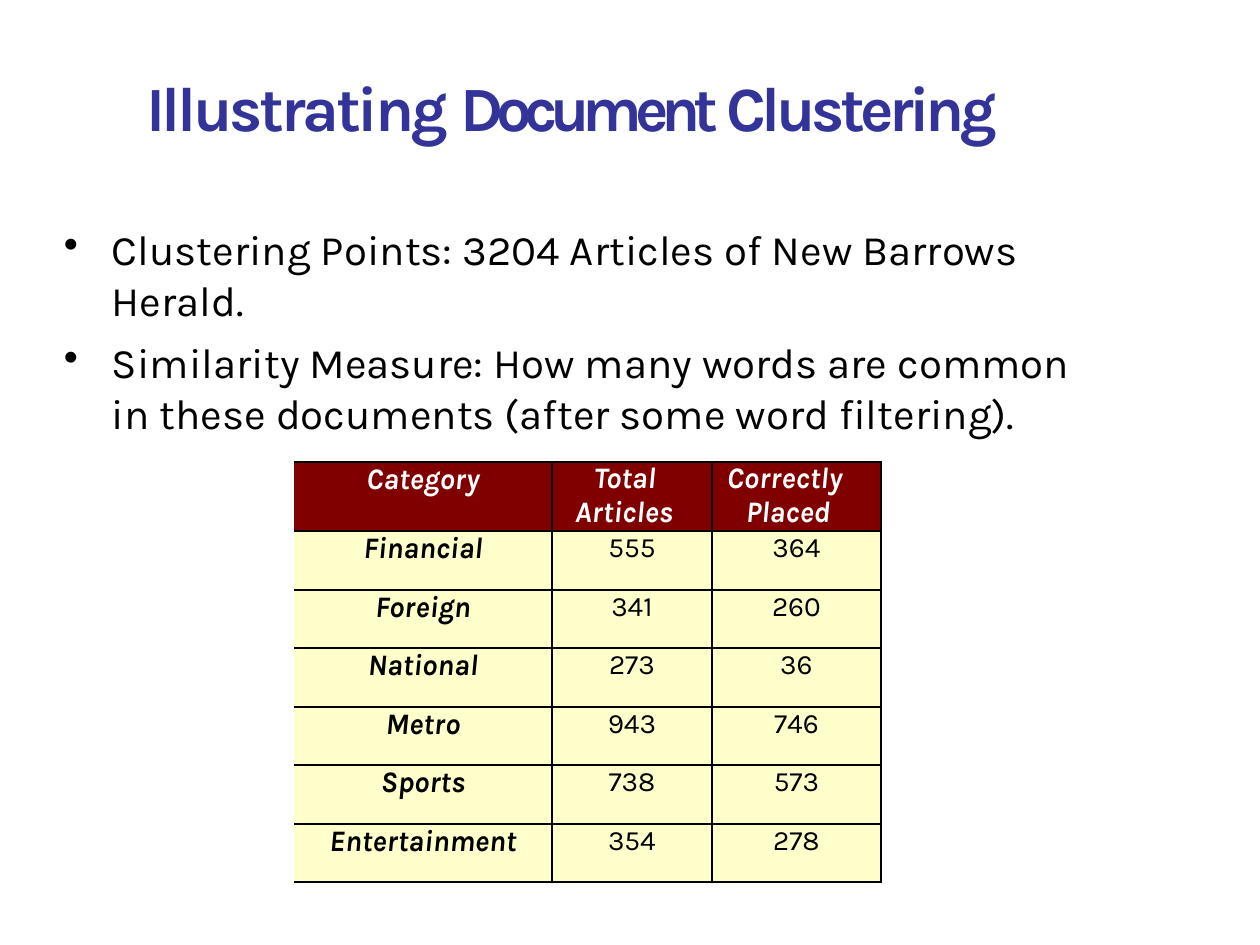
from dataclasses import dataclass

from lxml import etree
from pptx import Presentation
from pptx import util as u
from pptx.dml.color import RGBColor
from pptx.enum import text
from pptx.oxml import ns

EMU_PER_PX = 914400 / 126


@dataclass(frozen=True)
class Theme:
    font: str = "Karla"
    title: str = "333399"
    ink: str = "000000"
    header_ink: str = "FFFFFF"
    header_fill: str = "800000"
    body_fill: str = "FFFFCC"
    title_size: int = 36
    bullet_size: int = 24
    label_size: int = 17
    number_size: int = 16


@dataclass(frozen=True)
class Box:
    left: int
    top: int
    width: int
    height: int


@dataclass(frozen=True)
class Row:
    category: str
    total: int
    correct: int


@dataclass(frozen=True)
class Heading:
    label: str
    margin: int = 0
    indent: int = 0


THEME = Theme()
TITLE_BOX = Box(96, 48, 951, 96)
BULLET_BOX = Box(63, 210, 1018, 229)
TABLE_BOX = Box(294, 462, 587, 420)
COLUMN_WIDTHS = (258, 160, 169)
HEADER_HEIGHT = 69
TITLE_RUNS = (("Illustrating ", -190), ("Document ", -420), ("Clustering", -260))
BULLETS = (
    ("Clustering Points: 3204 Articles of New Barrows Herald.", 8),
    ("Similarity Measure: How many words are common in these documents "
     "(after some word filtering).", 7),
)
HEADINGS = (
    Heading("Category"),
    Heading("Total Articles", 23, 19),
    Heading("Correctly Placed", 34, -19),
)
ROWS = (
    Row("Financial", 555, 364),
    Row("Foreign", 341, 260),
    Row("National", 273, 36),
    Row("Metro", 943, 746),
    Row("Sports", 738, 573),
    Row("Entertainment", 354, 278),
)


def px(length: int) -> int:
    return round(length * EMU_PER_PX)


def style_font(font, size: int, color: str, bold=False, italic=False) -> None:
    font.name = THEME.font
    font.size = u.Pt(size)
    font.bold = bold
    font.italic = italic
    font.color.rgb = RGBColor.from_string(color)


def set_indent(para, margin: int, indent: int) -> None:
    properties = para._p.get_or_add_pPr()
    properties.set("marL", str(px(margin)))
    properties.set("indent", str(px(indent)))


def add_frame(page, box: Box, top_inset: int):
    shape = page.shapes.add_textbox(
        px(box.left), px(box.top), px(box.width), px(box.height))
    frame = shape.text_frame
    frame.word_wrap = True
    frame.margin_left = frame.margin_right = frame.margin_bottom = 0
    frame.margin_top = px(top_inset)
    return frame


def add_title(page) -> None:
    frame = add_frame(page, TITLE_BOX, 1)
    frame.vertical_anchor = text.MSO_ANCHOR.BOTTOM
    para = frame.paragraphs[0]
    para.alignment = text.PP_ALIGN.CENTER
    for words, spacing in TITLE_RUNS:
        span = para.add_run()
        span.text = words
        style_font(span.font, THEME.title_size, THEME.title, bold=True)
        span.font._element.set("spc", str(spacing))


def add_bullets(page) -> None:
    frame = add_frame(page, BULLET_BOX, 14)
    frame.text = "\n".join(words for words, _ in BULLETS)
    for index, (para, (_, space)) in enumerate(zip(frame.paragraphs, BULLETS)):
        set_indent(para, 49, -48)
        properties = para._p.get_or_add_pPr()
        color = etree.SubElement(properties, ns.qn("a:buClr"))
        etree.SubElement(color, ns.qn("a:srgbClr"), val=THEME.ink)
        etree.SubElement(properties, ns.qn("a:buChar"), char="•")
        if index:
            para.space_before = u.Pt(space)
        style_font(para.runs[0].font, THEME.bullet_size, THEME.ink)


def set_borders(cell, has_left: bool) -> None:
    """Rule every side of the cell, leaving the table's left edge open."""
    properties = cell._tc.get_or_add_tcPr()
    sides = (("L", 1.5 if has_left else 0), ("R", 1.5), ("T", 1), ("B", 1))
    for place, (side, points) in enumerate(sides):
        line = etree.Element(ns.qn(f"a:ln{side}"), w=str(u.Pt(points)))
        if points:
            fill = etree.SubElement(line, ns.qn("a:solidFill"))
            etree.SubElement(fill, ns.qn("a:srgbClr"), val=THEME.ink)
        else:
            etree.SubElement(line, ns.qn("a:noFill"))
        properties.insert(place, line)


def fill_cell(cell, words: str, fill: str, column: int):
    """Set the cell's text, fill and rules, and return its paragraph."""
    cell.margin_left = cell.margin_right = cell.margin_bottom = 0
    cell.margin_top = px(1) if column else 0
    cell.fill.solid()
    cell.fill.fore_color.rgb = RGBColor.from_string(fill)
    set_borders(cell, has_left=column > 0)
    cell.text_frame.text = words
    para = cell.text_frame.paragraphs[0]
    para.alignment = text.PP_ALIGN.CENTER
    return para


def fill_header(table) -> None:
    for column, heading in enumerate(HEADINGS):
        para = fill_cell(table.cell(0, column), heading.label,
                         THEME.header_fill, column)
        para.line_spacing = u.Pt(19.2 if column else 19.9)
        if column:
            para.alignment = text.PP_ALIGN.LEFT
            set_indent(para, heading.margin, heading.indent)
        style_font(para.runs[0].font, THEME.label_size, THEME.header_ink, True, True)


def fill_row(table, index: int, row: Row) -> None:
    for column, value in enumerate((row.category, row.total, row.correct)):
        para = fill_cell(table.cell(index, column), str(value),
                         THEME.body_fill, column)
        is_label = column == 0
        if is_label:
            para.line_spacing = u.Pt(20)
        size = THEME.label_size if is_label else THEME.number_size
        style_font(para.runs[0].font, size, THEME.ink, is_label, is_label)


def add_results(page) -> None:
    table = page.shapes.add_table(
        len(ROWS) + 1, len(HEADINGS), px(TABLE_BOX.left), px(TABLE_BOX.top),
        px(TABLE_BOX.width), px(TABLE_BOX.height)).table
    table.horz_banding = False
    for column, width in zip(table.columns, COLUMN_WIDTHS):
        column.width = px(width)
    table.rows[0].height = px(HEADER_HEIGHT)
    fill_header(table)
    for index, row in enumerate(ROWS, start=1):
        table.rows[index].height = px(58 + index % 2)
        fill_row(table, index, row)


def main() -> None:
    deck = Presentation()
    deck.slide_width, deck.slide_height = px(1260), px(945)
    page = deck.slides.add_slide(deck.slide_layouts[6])
    add_title(page)
    add_bullets(page)
    add_results(page)
    deck.save("out.pptx")


if __name__ == "__main__":
    main()
